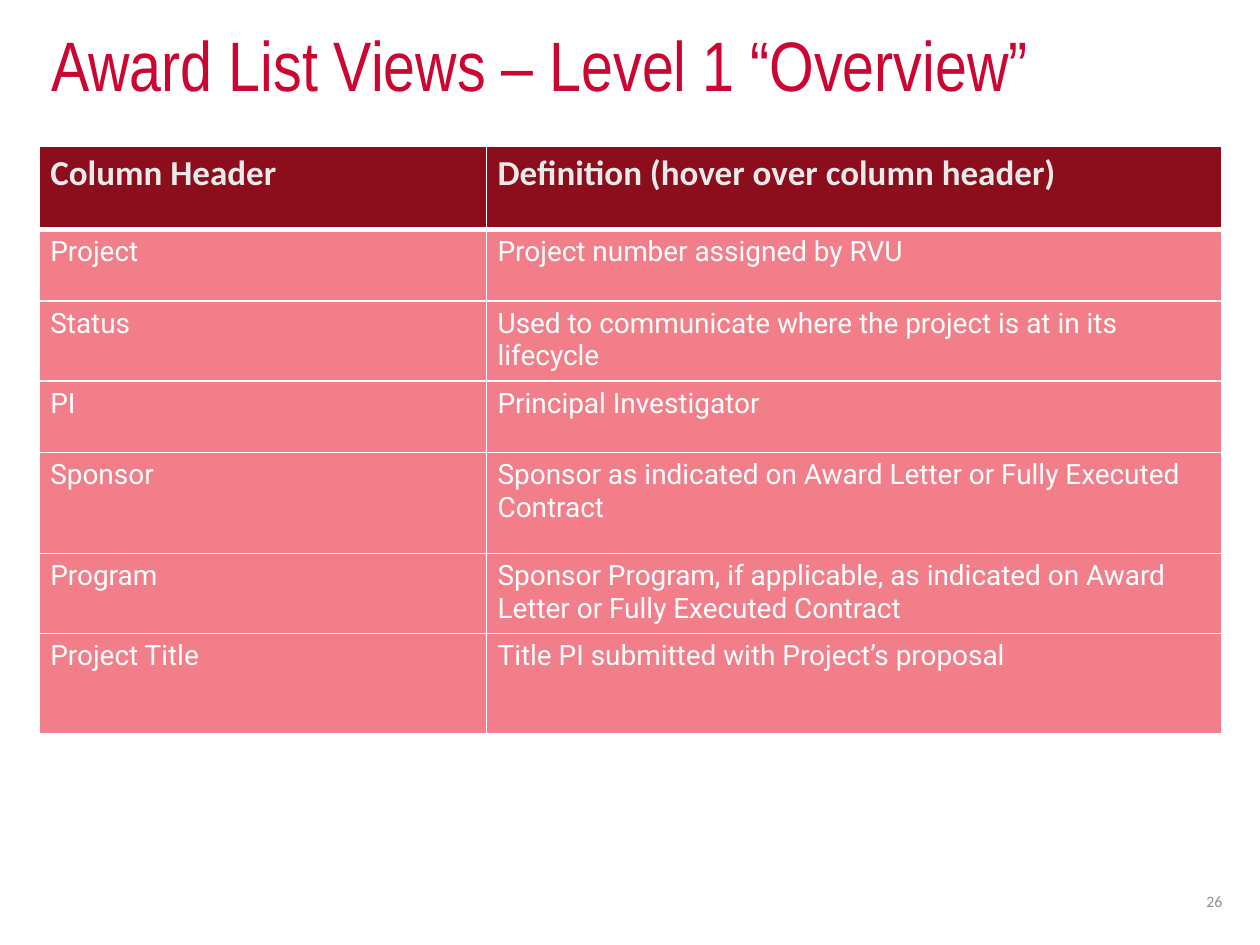
from lxml import etree
from pptx import Presentation
from pptx.dml.color import RGBColor
from pptx.enum import text
from pptx.oxml import ns
from pptx.util import Inches, Pt

WHITE = "FFFFFF"
HEADER_FILL = "8C0E1C"
BODY_FILL = "F27E8A"
COLUMN_WIDTHS = (3.55, 5.84)
ROW_HEIGHTS = (0.66, 0.57, 0.57, 0.57, 0.8, 0.58, 0.8)
ROWS = (
    ("Column Header", "Definition (hover over column header)"),
    ("Project", "Project number assigned by RVU"),
    ("Status", "Used to communicate where the project is at in its lifecycle"),
    ("PI", "Principal Investigator"),
    ("Sponsor", "Sponsor as indicated on Award Letter or Fully Executed Contract"),
    ("Program", "Sponsor Program, if applicable, as indicated on Award Letter "
                "or Fully Executed Contract"),
    ("Project Title", "Title PI submitted with Project’s proposal"),
)


def color(value):
    return RGBColor.from_string(value)


def add_span(para, words, font, size, ink, bold=False):
    span = para.add_run()
    span.text = words
    span.font.name = font
    span.font.size = Pt(size)
    span.font.bold = bold
    span.font.color.rgb = color(ink)


def add_label(page, bounds, words, font, size, ink, align=text.PP_ALIGN.LEFT, spacing=1.0):
    box = page.shapes.add_textbox(*(Inches(length) for length in bounds))
    frame = box.text_frame
    frame.word_wrap = True
    frame.vertical_anchor = text.MSO_ANCHOR.MIDDLE
    para = frame.paragraphs[0]
    para.alignment = align
    para.line_spacing = spacing
    add_span(para, words, font, size, ink)


def set_border(cell, side, points):
    properties = cell._tc.get_or_add_tcPr()
    line = etree.SubElement(properties, ns.qn(f"a:ln{side}"), w=str(Pt(points)))
    fill = etree.SubElement(line, ns.qn("a:solidFill"))
    etree.SubElement(fill, ns.qn("a:srgbClr"), val=WHITE)


def fill_cell(cell, words, row):
    header = row == 0
    widths = {"L": 1, "R": 1, "T": 3 if row == 1 else 1, "B": 3 if header else 1}
    for side, points in widths.items():
        set_border(cell, side, points)
    cell.fill.solid()
    cell.fill.fore_color.rgb = color(HEADER_FILL if header else BODY_FILL)
    cell.margin_left = cell.margin_right = Inches(0.09)
    cell.margin_top = cell.margin_bottom = Inches(0.05)
    para = cell.text_frame.paragraphs[0]
    if header:
        add_span(para, words, "Calibri", 20, "EAEAEA", bold=True)
    else:
        add_span(para, words, "Roboto", 16, WHITE)


def add_definitions(page, left, top):
    table = page.shapes.add_table(
        len(ROWS), len(COLUMN_WIDTHS), Inches(left), Inches(top),
        Inches(sum(COLUMN_WIDTHS)), Inches(sum(ROW_HEIGHTS))).table
    for column, width in zip(table.columns, COLUMN_WIDTHS):
        column.width = Inches(width)
    for row, (entries, height) in enumerate(zip(ROWS, ROW_HEIGHTS)):
        table.rows[row].height = Inches(height)
        for column, words in enumerate(entries):
            fill_cell(table.cell(row, column), words, row)


def main():
    deck = Presentation()
    deck.slide_width = Inches(10)
    deck.slide_height = Inches(7.5)
    page = deck.slides.add_slide(deck.slide_layouts[6])
    add_label(page, (0.31, 0.22, 8.62, 0.66), "Award List Views – Level 1 “Overview”",
              "Arial Narrow", 40, "CC0633", spacing=0.9)
    add_definitions(page, 0.31, 1.16)
    add_label(page, (9.45, 6.95, 0.35, 0.4), "26", "Calibri", 9, "8C8C8C",
              align=text.PP_ALIGN.RIGHT)
    deck.save("out.pptx")


if __name__ == "__main__":
    main()
